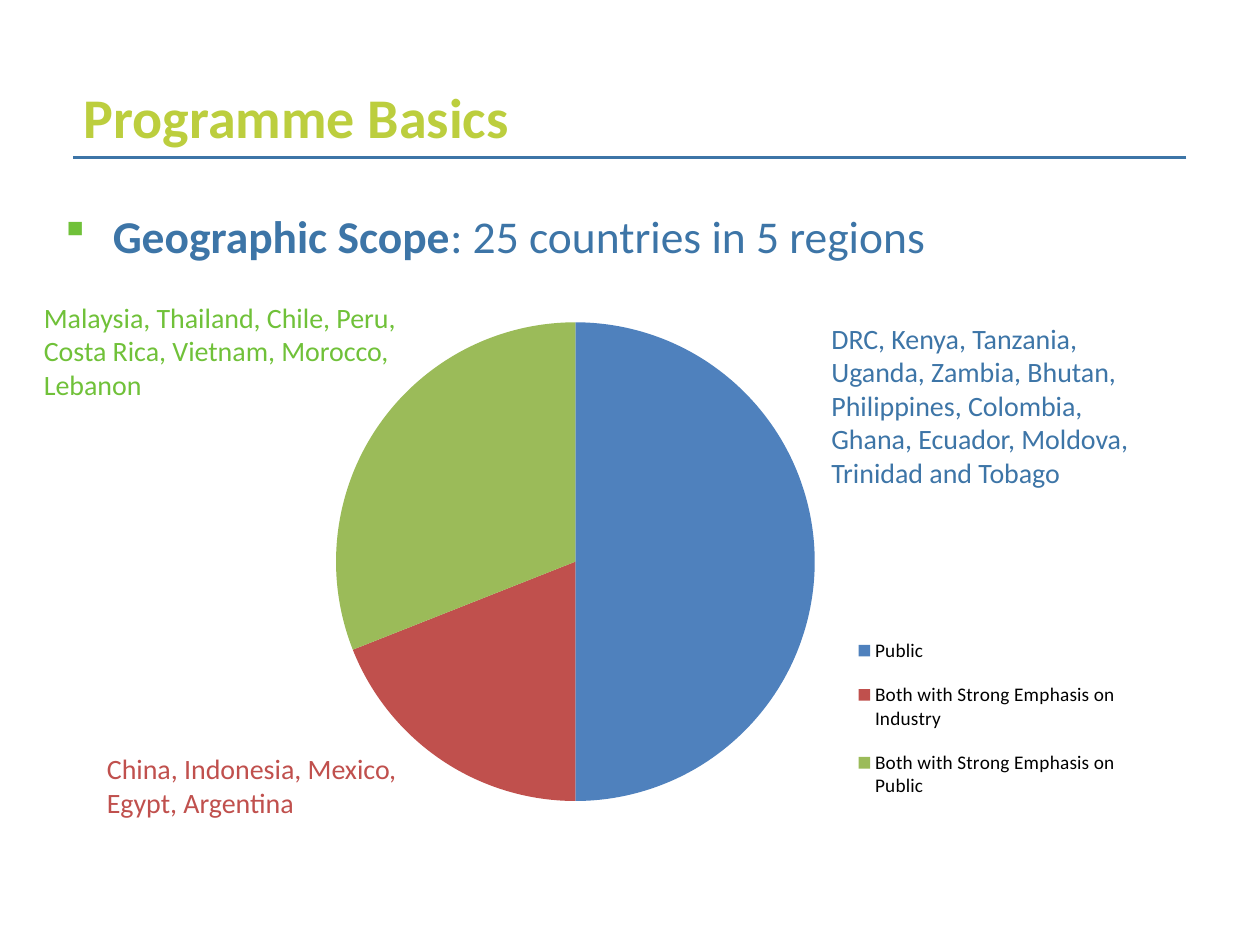
from lxml import etree
from pptx import Presentation
from pptx.chart.data import CategoryChartData
from pptx.dml.color import RGBColor
from pptx.enum.chart import XL_CHART_TYPE, XL_LEGEND_POSITION
from pptx.enum.shapes import MSO_CONNECTOR, MSO_SHAPE
from pptx.enum.text import MSO_ANCHOR, PP_ALIGN
from pptx.oxml import parse_xml
from pptx.oxml.ns import nsdecls, qn
from pptx.util import Inches, Pt

PIE = XL_CHART_TYPE.PIE
LEGEND_RIGHT = XL_LEGEND_POSITION.RIGHT
STRAIGHT = MSO_CONNECTOR.STRAIGHT
RECTANGLE = MSO_SHAPE.RECTANGLE
TOP = MSO_ANCHOR.TOP
LEFT = PP_ALIGN.LEFT

FONT = "Calibri"
WHITE = RGBColor(0xFF, 0xFF, 0xFF)
LIME = RGBColor(0xBC, 0xCE, 0x3E)
BLUE = RGBColor(0x3D, 0x75, 0xA7)
GREEN = RGBColor(0x70, 0xC1, 0x39)
RED = RGBColor(0xC0, 0x50, 0x4D)
BLACK = RGBColor(0, 0, 0)
PIE_BLUE = RGBColor(0x4F, 0x81, 0xBD)
PIE_GREEN = RGBColor(0x9B, 0xBB, 0x59)

# Slices: name, share in percent, colour
SLICES = [
    ("Public", 50, PIE_BLUE),
    ("Both with Strong Emphasis on Industry", 19, RED),
    ("Both with Strong Emphasis on Public", 31, PIE_GREEN),
]

# Country lists: place on the grid, colour, text
COUNTRIES = [
    ((9, 71, 33, 7.7), RED, "China, Indonesia, Mexico, Egypt, Argentina"),
    ((3, 28, 37, 10.9), GREEN,
     "Malaysia, Thailand, Chile, Peru, Costa Rica, Vietnam, Morocco, Lebanon"),
    ((78, 30, 33, 17.4), BLUE,
     "DRC, Kenya, Tanzania, Uganda, Zambia, Bhutan, Philippines, Colombia, "
     "Ghana, Ecuador, Moldova, Trinidad and Tobago"),
]


def grid(*cells):
    """Lengths on a grid of twelve cells to the inch."""
    return [Inches(cell / 12) for cell in cells]


def style_font(font, size, color, bold=False):
    font.name = FONT
    font.size = Pt(size)
    font.bold = bold
    font.color.rgb = color


def add_text(page, place, text, size, color, bold=False):
    box = page.shapes.add_textbox(*grid(*place))
    box.text_frame.word_wrap = True
    para = box.text_frame.paragraphs[0]
    para.text = text
    style_font(para.font, size, color, bold)


def add_rule(page, ends, color, width):
    rule = page.shapes.add_connector(STRAIGHT, *grid(*ends))
    rule.line.color.rgb = color
    rule.line.width = Pt(width)
    etree.SubElement(rule._element.spPr, qn("a:effectLst"))


def add_bullet_panel(page, place, label, text):
    panel = page.shapes.add_shape(RECTANGLE, *grid(*place))
    panel.shadow.inherit = False
    panel.fill.solid()
    panel.fill.fore_color.rgb = WHITE
    panel.line.fill.background()
    frame = panel.text_frame
    frame.word_wrap = True
    frame.vertical_anchor = TOP
    frame.margin_top = frame.margin_bottom = Inches(0.1)
    para = frame.paragraphs[0]
    para.alignment = LEFT
    para.line_spacing = 1.5
    props = para._p.get_or_add_pPr()
    props.set("marL", str(Inches(0.38)))
    props.set("indent", str(-Inches(0.38)))
    color = etree.SubElement(props, qn("a:buClr"))
    etree.SubElement(color, qn("a:srgbClr"), val=str(GREEN))
    # The symbol font draws this character as a small square
    etree.SubElement(props, qn("a:buFont"), typeface="Wingdings", charset="2")
    etree.SubElement(props, qn("a:buChar"), char="§")
    style_font(para.font, 26, BLUE)
    for content, bold in ((label, True), (text, False)):
        span = para.add_run()
        span.text = content
        span.font.bold = bold


def manual_layout(x, y, width, height, inner=False):
    """Fixed place inside a chart, in shares of the chart's size."""
    target = '<c:layoutTarget val="inner"/>' if inner else ""
    return parse_xml(
        f'<c:layout {nsdecls("c")}><c:manualLayout>{target}'
        '<c:xMode val="edge"/><c:yMode val="edge"/>'
        f'<c:x val="{x}"/><c:y val="{y}"/><c:w val="{width}"/><c:h val="{height}"/>'
        '</c:manualLayout></c:layout>')


def add_pie(page, place):
    data = CategoryChartData()
    data.categories = [name for name, _, _ in SLICES]
    data.add_series("Series 1", [share for _, share, _ in SLICES])
    chart = page.shapes.add_chart(PIE, *grid(*place), data).chart
    chart.has_title = False
    style_font(chart.font, 10, BLACK)
    plot = chart.plots[0]
    plot.vary_by_categories = True
    for index, (_, _, color) in enumerate(SLICES):
        fill = plot.series[0].points[index].format.fill
        fill.solid()
        fill.fore_color.rgb = color

    # Legend at lower right, pie at left
    chart.has_legend = True
    legend = chart.legend
    legend.position = LEGEND_RIGHT
    legend.include_in_layout = False
    style_font(legend.font, 11, BLACK)
    for old in legend._element.findall(qn("c:layout")):
        legend._element.remove(old)
    legend._element.find(qn("c:legendPos")).addnext(
        manual_layout(0.66, 0.61, 0.33, 0.39))
    area = chart._chartSpace.chart.plotArea
    for old in area.findall(qn("c:layout")):
        area.remove(old)
    area.insert(0, manual_layout(0.05, 0.03, 0.57, 0.94, inner=True))


def main():
    deck = Presentation()
    deck.slide_width, deck.slide_height = grid(120, 90)
    page = deck.slides.add_slide(deck.slide_layouts[6])

    # Heading
    add_text(page, (6.8, 7.25, 73, 7.7), "Programme Basics", 32, LIME, bold=True)
    add_bullet_panel(page, (5, 16, 111, 9.5),
                     "Geographic Scope", ": 25 countries in 5 regions")
    add_rule(page, (113, 15, 7, 15), BLUE, 2)

    # Countries around the pie
    for place, color, names in COUNTRIES:
        add_text(page, place, names, 16, color)
    add_pie(page, (28, 29, 80, 49))

    deck.save("out.pptx")


if __name__ == "__main__":
    main()
